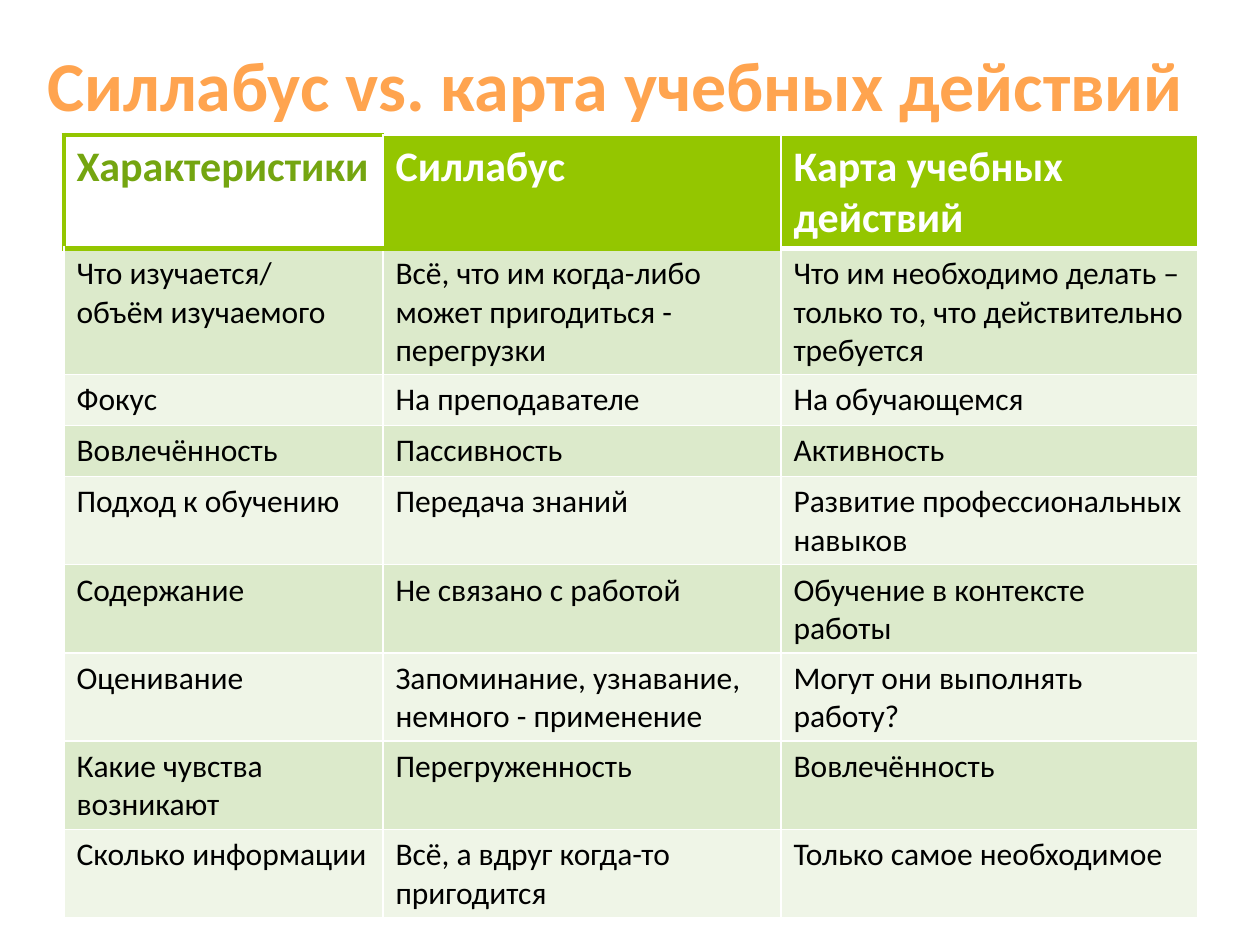
"""Build a slide with a table that compares a syllabus with a learning map."""
from lxml.etree import SubElement
from pptx import Presentation
from pptx.dml.color import RGBColor as RGB
from pptx.enum.text import MSO_ANCHOR as Anchor
from pptx.oxml.ns import qn
from pptx.util import Pt

PX = 914400 / 126
GREEN, WHITE = "93C600", "FFFFFF"


def px(num):
    return round(num * PX)


def style(font, size, color, bold):
    font.name, font.size, font.bold = "Calibri", Pt(size), bold
    font.color.rgb = RGB.from_string(color)


deck = Presentation()
deck.slide_width, deck.slide_height = px(1260), px(945)
slide = deck.slides.add_slide(deck.slide_layouts[6])

title = slide.shapes.add_textbox(px(35), px(38), px(1191), px(107)).text_frame
title.word_wrap = True
title.vertical_anchor = Anchor.MIDDLE
head = title.paragraphs[0]
head.text = "Силлабус vs. карта учебных действий"
head.line_spacing = 0.8
style(head.font, 40, "FFA44F", True)

rows = [
    ("Характеристики", "Силлабус", "Карта учебных действий"),
    ("Что изучается/\nобъём изучаемого",
     "Всё, что им когда-либо может пригодиться - перегрузки",
     "Что им необходимо делать – только то, что действительно требуется"),
    ("Фокус", "На преподавателе", "На обучающемся"),
    ("Вовлечённость", "Пассивность", "Активность"),
    ("Подход к обучению", "Передача знаний",
     "Развитие профессиональных навыков"),
    ("Содержание", "Не связано с работой", "Обучение в контексте работы"),
    ("Оценивание", "Запоминание, узнавание, немного - применение",
     "Могут они выполнять работу?"),
    ("Какие чувства возникают", "Перегруженность", "Вовлечённость"),
    ("Сколько информации", "Всё, а вдруг когда-то пригодится",
     "Только самое необходимое"),
]
widths = [319, 398, 417]
heights = [113, 126, 51, 51] + [88] * 5

grid = slide.shapes.add_table(
    len(rows), len(widths), px(64), px(135), px(sum(widths)), px(sum(heights))
).table
for col, width in zip(grid.columns, widths):
    col.width = px(width)

for r, (row, height) in enumerate(zip(rows, heights)):
    grid.rows[r].height = px(height)
    for c, text in enumerate(row):
        cell = grid.cell(r, c)
        cell.text = text
        first = r == 0 and c == 0
        if r == 0:
            size, ink, fill = 24, "74A510" if first else WHITE, WHITE if first else "94C600"
        else:
            size, ink, fill = 18, "000000", "DCEACB" if r % 2 else "EFF5E7"
        for para in cell.text_frame.paragraphs:
            style(para.font, size, ink, r == 0)

        rule = (WHITE if c == 2 else GREEN, 3)
        thin = (WHITE, 1)
        edge = (GREEN, 3) if first else thin
        sides = {
            "L": edge,
            "R": thin,
            "T": rule if r == 1 else edge,
            "B": rule if r == 0 else thin,
        }
        props = cell._tc.get_or_add_tcPr()
        for side, (color, width) in sides.items():
            line = SubElement(props, qn(f"a:ln{side}"), w=str(Pt(width)))
            SubElement(SubElement(line, qn("a:solidFill")), qn("a:srgbClr"), val=color)
        cell.fill.solid()
        cell.fill.fore_color.rgb = RGB.from_string(fill)

deck.save("out.pptx")
